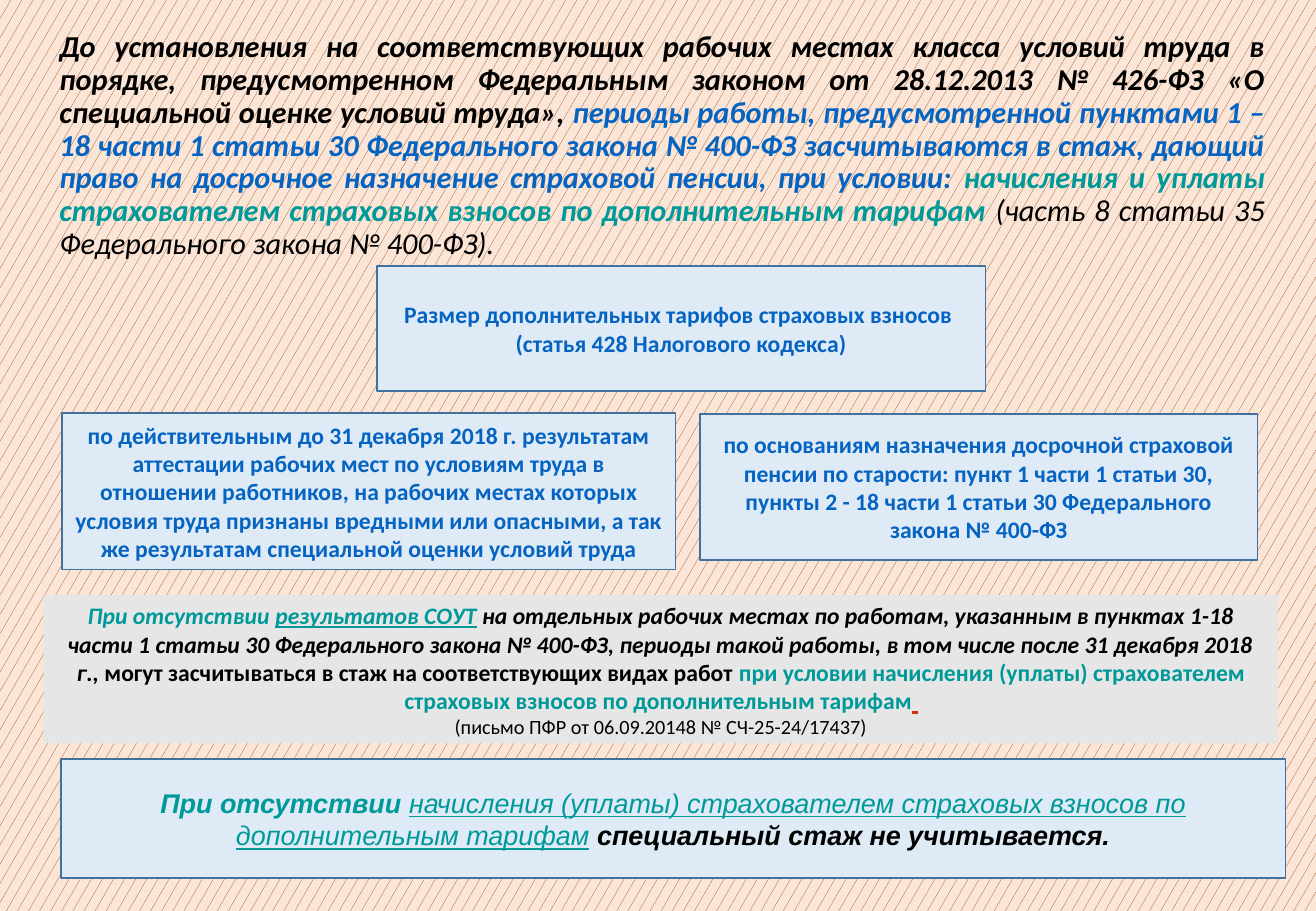
import pptx
import pptx.dml.color
import pptx.enum.dml
import pptx.enum.shapes
import pptx.enum.text
import pptx.util

Inches = pptx.util.Inches
ALIGN = pptx.enum.text.PP_ALIGN
ANCHOR = pptx.enum.text.MSO_ANCHOR

THEME = {
    "black": "000000", "blue": "0563C1", "teal": "009999", "red": "CC3300",
    "box": "DEEBF7", "border": "41719C", "gray": "E7E6E6",
    "hatch": "843C0B", "backdrop": "FBE5D6",
    "intro": 18, "body": 14, "source": 12, "conclusion": 16,
    "font": "Calibri", "conclusion font": "Arial",
}


def color(name):
    return pptx.dml.color.RGBColor.from_string(THEME[name])


def write(shape, paragraphs, anchor=ANCHOR.MIDDLE, align=ALIGN.CENTER, font="font"):
    """Fill a shape with (size, runs); each run is (text, color, style letters b, i, u)."""
    frame = shape.text_frame
    frame.word_wrap = True
    frame.vertical_anchor = anchor
    frame.margin_left = frame.margin_right = Inches(0.1)
    frame.margin_top = frame.margin_bottom = Inches(0.05)
    for index, (size, runs) in enumerate(paragraphs):
        paragraph = frame.add_paragraph() if index else frame.paragraphs[0]
        paragraph.alignment = align
        paragraph.font.name = THEME[font]
        paragraph.font.size = pptx.util.Pt(THEME[size])
        for text, run_color, style in runs:
            run = paragraph.add_run()
            run.text = text
            run.font.color.rgb = color(run_color)
            run.font.bold = "b" in style
            run.font.italic = "i" in style
            run.font.underline = "u" in style


presentation = pptx.Presentation()
presentation.slide_width = Inches(10.83)
presentation.slide_height = Inches(7.5)
slide = presentation.slides.add_slide(presentation.slide_layouts[6])

background = slide.background.fill
background.patterned()
background.pattern = pptx.enum.dml.MSO_PATTERN.SMALL_CONFETTI
background.fore_color.rgb = color("hatch")
background.back_color.rgb = color("backdrop")

intro = slide.shapes.add_textbox(Inches(0.39), Inches(0.21), Inches(10.12), Inches(1.82))
write(intro, [("intro", [
    ("До установления на соответствующих рабочих местах класса условий труда в порядке, "
     "предусмотренном Федеральным законом от 28.12.2013 № 426-ФЗ "
     "«О специальной оценке условий труда», ", "black", "bi"),
    ("периоды работы, предусмотренной пунктами 1 – 18 части 1 статьи 30 Федерального закона "
     "№ 400-ФЗ засчитываются в стаж, дающий право на досрочное назначение страховой пенсии, "
     "при условии:", "blue", "bi"),
    (" начисления и уплаты страхователем страховых взносов по дополнительным тарифам ",
     "teal", "bi"),
    ("(часть 8 статьи 35 Федерального закона № 400-ФЗ).", "black", "i"),
])], ANCHOR.TOP, ALIGN.JUSTIFY)
intro.text_frame.paragraphs[0].line_spacing = 0.9

tariff_title = [
    ("body", [("Размер дополнительных тарифов страховых взносов ", "blue", "b")]),
    ("body", [("(статья 428 Налогового кодекса)", "blue", "b")]),
]
by_assessment = [("body", [
    ("по действительным до 31 декабря 2018 г. результатам аттестации рабочих мест по условиям "
     "труда в отношении работников, на рабочих местах которых условия труда признаны вредными "
     "или опасными, а так же результатам специальной оценки условий труда", "blue", "b"),
])]
by_pension_grounds = [("body", [
    ("по основаниям назначения досрочной страховой пенсии по старости: пункт 1 части 1 "
     "статьи 30, пункты 2 - 18 части 1 статьи 30 Федерального закона № 400-ФЗ", "blue", "b"),
])]
no_assessment = [
    ("body", [
        ("При отсутствии ", "teal", "bi"),
        ("результатов СОУТ", "teal", "biu"),
        (" ", "teal", "bi"),
        ("на отдельных рабочих местах по работам, указанным в пунктах 1-18 части 1 статьи 30 "
         "Федерального закона № 400-ФЗ, периоды такой работы, в том числе после "
         "31 декабря 2018 г., ", "black", "bi"),
        ("могут засчитываться в стаж на соответствующих видах работ", "black", "b"),
        (" при условии начисления (уплаты) страхователем страховых взносов по дополнительным "
         "тарифам", "teal", "b"),
        (" ", "red", "bu"),
    ]),
    ("source", [("(письмо ПФР от 06.09.20148 № СЧ-25-24/17437)", "black", "")]),
]
conclusion = [("conclusion", [
    ("При отсутствии ", "teal", "bi"),
    ("начисления (уплаты) страхователем страховых взносов по дополнительным тарифам",
     "teal", "iu"),
    (" ", "teal", "bi"),
    ("специальный стаж не учитывается.", "black", "bi"),
])]

boxes = [
    ((3.1, 2.19, 5.01, 1.03), "box", ANCHOR.MIDDLE, "font", tariff_title),
    ((0.51, 3.4, 5.05, 1.29), "box", ANCHOR.MIDDLE, "font", by_assessment),
    ((5.76, 3.41, 4.59, 1.2), "box", ANCHOR.MIDDLE, "font", by_pension_grounds),
    ((0.36, 4.9, 10.16, 1.22), "gray", ANCHOR.TOP, "font", no_assessment),
    ((0.5, 6.25, 10.08, 0.98), "box", ANCHOR.MIDDLE, "conclusion font", conclusion),
]
for position, fill, anchor, font, paragraphs in boxes:
    box = slide.shapes.add_shape(
        pptx.enum.shapes.MSO_SHAPE.RECTANGLE, *[Inches(length) for length in position])
    box.shadow.inherit = False
    box.fill.solid()
    box.fill.fore_color.rgb = color(fill)
    if fill == "box":
        box.line.color.rgb = color("border")
        box.line.width = pptx.util.Pt(1)
    else:
        box.line.fill.background()
    write(box, paragraphs, anchor, font=font)

presentation.save("out.pptx")
